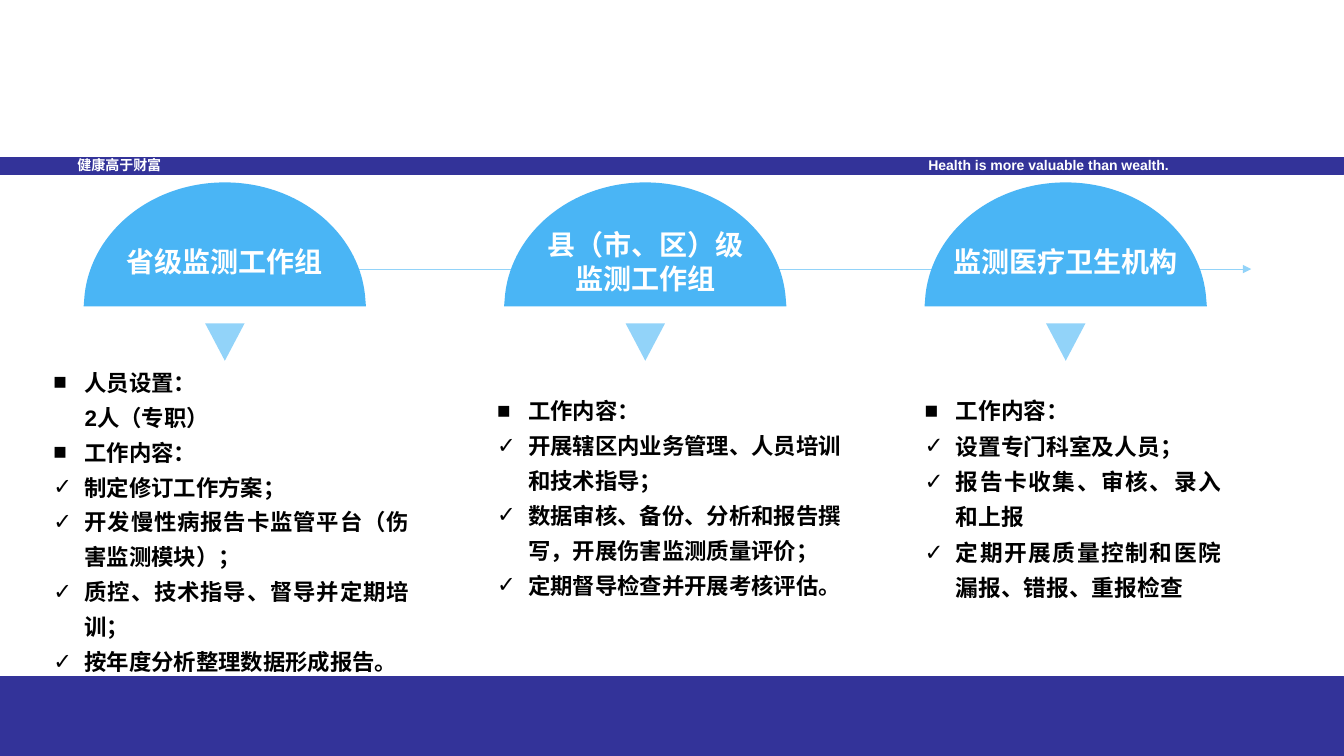
"""Build a slide on the three levels of a health monitoring network."""
from lxml.etree import SubElement
from pptx import Presentation
from pptx.dml.color import RGBColor
from pptx.enum.shapes import MSO_CONNECTOR as CONNECTOR, MSO_SHAPE as SHAPE
from pptx.enum.text import MSO_ANCHOR as ANCHOR, PP_ALIGN as ALIGN
from pptx.oxml.ns import qn
from pptx.util import Inches, Pt

NAVY = RGBColor(0x33, 0x33, 0x99)
SKY = RGBColor(0x4A, 0xB5, 0xF5)
PALE = RGBColor(0x92, 0xD3, 0xF9)
WHITE = RGBColor(0xFF, 0xFF, 0xFF)
BLACK = RGBColor(0, 0, 0)

BANDS = [(1.56, 0.17), (6.71, 0.79)]
SLOGANS = [
    ("健康高于财富", 0.67, 1.89, ALIGN.JUSTIFY),
    ("Health is more valuable than wealth.", 9.11, 3.56, ALIGN.LEFT),
]
LEVELS = [
    {
        "title": ["省级监测工作组"],
        "box": (0.53, 3.58, 3.53, 3.09), "size": 16, "align": ALIGN.JUSTIFY,
        "items": [
            ("■", "人员设置："),
            ("", "2人（专职）"),
            ("■", "工作内容："),
            ("✓", "制定修订工作方案；"),
            ("✓", "开发慢性病报告卡监管平台（伤害监测模块）；"),
            ("✓", "质控、技术指导、督导并定期培训；"),
            ("✓", "按年度分析整理数据形成报告。"),
        ],
    },
    {
        "title": ["县（市、区）级", "监测工作组"],
        "box": (4.93, 3.86, 3.49, 2.78), "size": 16, "align": ALIGN.LEFT,
        "items": [
            ("■", "工作内容："),
            ("✓", "开展辖区内业务管理、人员培训和技术指导；"),
            ("✓", "数据审核、备份、分析和报告撰写，开展伤害监测质量评价；"),
            ("✓", "定期督导检查并开展考核评估。"),
        ],
    },
    {
        "title": ["监测医疗卫生机构"],
        "box": (9.17, 3.86, 2.94, 2.5), "size": 16.2, "align": ALIGN.JUSTIFY,
        "items": [
            ("■", "工作内容："),
            ("✓", "设置专门科室及人员；"),
            ("✓", "报告卡收集、审核、录入和上报"),
            ("✓", "定期开展质量控制和医院漏报、错报、重报检查"),
        ],
    },
]
FIRST_CENTER, LEVEL_STEP = 2.23, 4.17
DOME_TOP, DOME_RADIUS, DOME_HEIGHT = 1.81, 1.4, 1.23
SHOULDER_X, SHOULDER_Y = 1.39, 1.11
TOP_HANDLE, SIDE_HANDLE = (0.73, 0), (1.32, 0.49)
AXIS_START, AXIS_END, AXIS_Y = 1.28, 12.41, 2.67
POINTER_TOP, POINTER_WIDTH, POINTER_HEIGHT = 3.21, 0.39, 0.37
INDENT = Inches(0.31)


def paint(shape, color, line_color=None):
    shape.shadow.inherit = False
    shape.fill.solid()
    shape.fill.fore_color.rgb = color
    if line_color is None:
        shape.line.fill.background()
    else:
        shape.line.color.rgb = line_color
        shape.line.width = Pt(0.75)


def style(paragraph, font_name, size, color, align):
    paragraph.alignment = align
    font = paragraph.font
    font.name, font.size, font.bold = font_name, Pt(size), True
    font.color.rgb = color


def add_box(slide, left, top, width, height):
    box = slide.shapes.add_textbox(*map(Inches, (left, top, width, height)))
    box.text_frame.word_wrap = True
    return box.text_frame


def add_axis(slide):
    axis = slide.shapes.add_connector(
        CONNECTOR.STRAIGHT, *map(Inches, (AXIS_START, AXIS_Y, AXIS_END, AXIS_Y)))
    axis.line.color.rgb = PALE
    axis.line.width = Pt(0.5)
    line = axis.line._get_or_add_ln()
    SubElement(line, qn("a:headEnd"), type="oval")
    SubElement(line, qn("a:tailEnd"), type="triangle")
    SubElement(axis._element.spPr, qn("a:effectLst"))


def bend(segment, handles):
    segment.tag = qn("a:cubicBezTo")
    for index, (x, y) in enumerate(handles):
        handle = SubElement(segment, qn("a:pt"), x=str(Inches(DOME_RADIUS + x)),
                            y=str(Inches(y)))
        segment.insert(index, handle)


def add_dome(slide, center, title):
    corners = [(SHOULDER_X, SHOULDER_Y), (DOME_RADIUS, DOME_HEIGHT),
               (-DOME_RADIUS, DOME_HEIGHT), (-SHOULDER_X, SHOULDER_Y), (0, 0)]
    points = [(Inches(center + x), Inches(DOME_TOP + y)) for x, y in corners]
    builder = slide.shapes.build_freeform(*points[-1])
    builder.add_line_segments(points, close=True)
    dome = builder.convert_to_shape()
    segments = list(dome._element.iter(qn("a:lnTo")))
    bend(segments[0], [TOP_HANDLE, SIDE_HANDLE])
    bend(segments[4], [(-x, y) for x, y in (SIDE_HANDLE, TOP_HANDLE)])
    paint(dome, SKY)
    frame = dome.text_frame
    frame.word_wrap = True
    frame.vertical_anchor = ANCHOR.MIDDLE
    frame.margin_top, frame.margin_bottom = Inches(0.38), Inches(0.05)
    frame.text = "\n".join(title)
    for paragraph in frame.paragraphs:
        style(paragraph, "Calibri", 20, WHITE, ALIGN.CENTER)


def add_pointer(slide, center):
    pointer = slide.shapes.add_shape(
        SHAPE.ISOSCELES_TRIANGLE, Inches(center - POINTER_WIDTH / 2),
        Inches(POINTER_TOP), Inches(POINTER_WIDTH), Inches(POINTER_HEIGHT))
    pointer._element.spPr.get_or_add_xfrm().set("flipV", "1")
    paint(pointer, PALE)


def add_duties(slide, level):
    frame = add_box(slide, *level["box"])
    frame.margin_left = frame.margin_right = 0
    frame.margin_top = frame.margin_bottom = 0
    frame.text = "\n".join(text for _, text in level["items"])
    for paragraph, (bullet, _) in zip(frame.paragraphs, level["items"]):
        properties = paragraph._p.get_or_add_pPr()
        properties.set("marL", str(INDENT))
        if bullet:
            properties.set("indent", str(-INDENT))
            SubElement(properties, qn("a:buFont"), typeface="Arial")
            SubElement(properties, qn("a:buChar"), char=bullet)
        paragraph.line_spacing = 1.3
        style(paragraph, "Arial", level["size"], BLACK, level["align"])


def main():
    presentation = Presentation()
    presentation.slide_width, presentation.slide_height = Inches(13.33), Inches(7.5)
    slide = presentation.slides.add_slide(presentation.slide_layouts[6])
    for top, height in BANDS:
        band = slide.shapes.add_shape(
            SHAPE.RECTANGLE, 0, Inches(top), presentation.slide_width, Inches(height))
        paint(band, NAVY, NAVY)
    for text, left, width, align in SLOGANS:
        frame = add_box(slide, left, 1.5, width, 0.27)
        frame.text = text
        style(frame.paragraphs[0], "Arial", 10, WHITE, align)
    add_axis(slide)
    for index, level in enumerate(LEVELS):
        center = FIRST_CENTER + index * LEVEL_STEP
        add_dome(slide, center, level["title"])
        add_pointer(slide, center)
        add_duties(slide, level)
    presentation.save("out.pptx")


if __name__ == "__main__":
    main()
